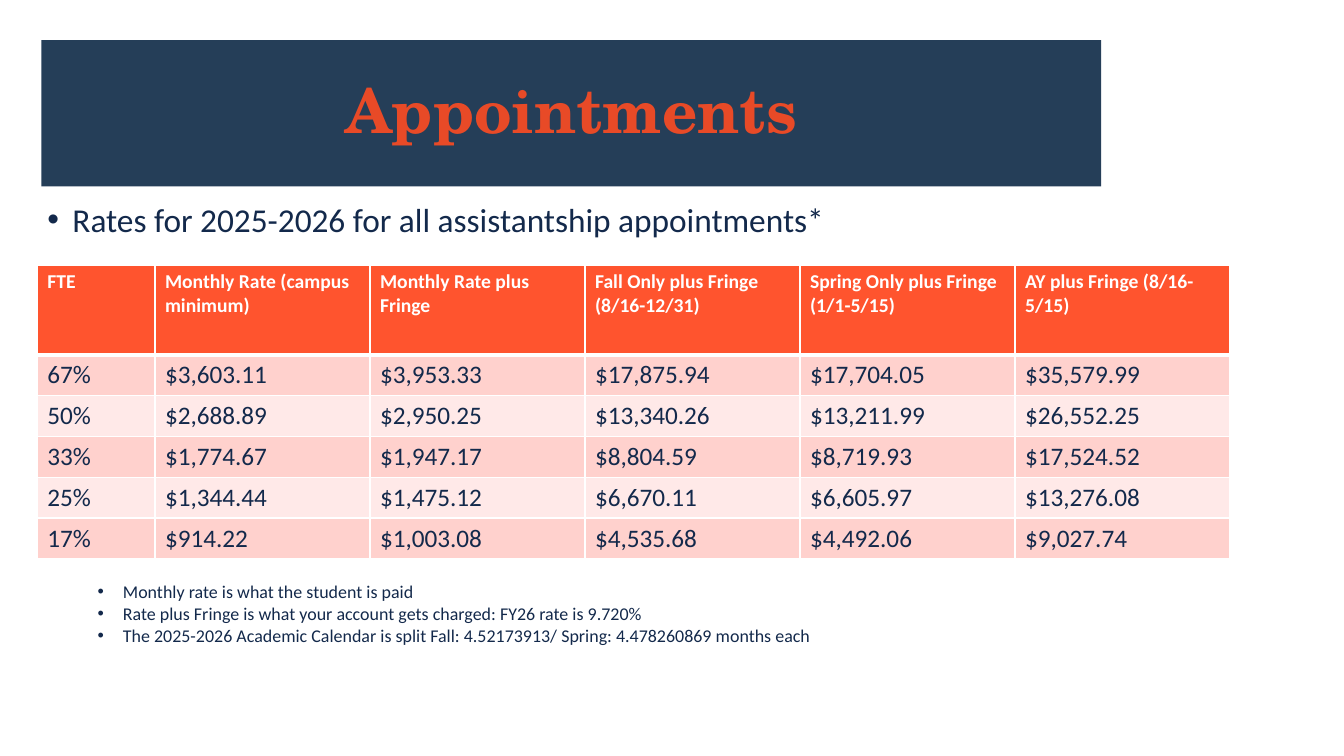
"""Build a slide of assistantship appointment rates."""
import pptx
import pptx.dml.color
import pptx.enum.shapes
import pptx.enum.text
import pptx.oxml.ns
import pptx.util
from lxml import etree

SLIDE_WIDTH = pptx.util.Inches(13.33)
SLIDE_HEIGHT = pptx.util.Inches(7.5)
NAVY = "13294B"
WHITE = "FFFFFF"
HEADER_FILL = "FF542E"
BAND_FILLS = ("FFD1CD", "FFE9E8")
LEFT = 2.78
FTE_COLUMN, RATE_COLUMN = 8.75, 16
HEADER_ROW, RATE_ROW = 11.87, 5.4

RATES = [
    ("FTE", "Monthly Rate (campus minimum)", "Monthly Rate plus Fringe",
     "Fall Only plus Fringe (8/16-12/31)", "Spring Only plus Fringe (1/1-5/15)",
     "AY plus Fringe (8/16-5/15)"),
    ("67%", "$3,603.11", "$3,953.33", "$17,875.94", "$17,704.05", "$35,579.99"),
    ("50%", "$2,688.89", "$2,950.25", "$13,340.26", "$13,211.99", "$26,552.25"),
    ("33%", "$1,774.67", "$1,947.17", "$8,804.59", "$8,719.93", "$17,524.52"),
    ("25%", "$1,344.44", "$1,475.12", "$6,670.11", "$6,605.97", "$13,276.08"),
    ("17%", "$914.22", "$1,003.08", "$4,535.68", "$4,492.06", "$9,027.74"),
]
NOTES = [
    "Monthly rate is what the student is paid",
    "Rate plus Fringe is what your account gets charged: FY26 rate is 9.720%",
    "The 2025-2026 Academic Calendar is split Fall: 4.52173913/ Spring: 4.478260869 months each",
]


def across(percent):
    """Return a percentage of the slide width."""
    return int(SLIDE_WIDTH * percent / 100)


def down(percent):
    """Return a percentage of the slide height."""
    return int(SLIDE_HEIGHT * percent / 100)


def area(left, top, width, height):
    """Return a slide area given in percentages."""
    return across(left), down(top), across(width), down(height)


def color(value):
    """Return the colour of a hex string."""
    return pptx.dml.color.RGBColor.from_string(value)


def paint(part, value):
    """Fill a shape or cell with one colour."""
    part.fill.solid()
    part.fill.fore_color.rgb = color(value)


def style(paragraph, size, value, face="Calibri", bold=False):
    """Set the font of every run in a paragraph."""
    for run in paragraph.runs:
        run.font.name = face
        run.font.size = pptx.util.Pt(size)
        run.font.bold = bold
        run.font.color.rgb = color(value)


def add_banner(slide, heading):
    """Add the title banner."""
    banner = slide.shapes.add_shape(
        pptx.enum.shapes.MSO_SHAPE.RECTANGLE, *area(3.08, 5.33, 78.85, 19.33))
    banner.shadow.inherit = False
    paint(banner, "253E58")
    banner.line.fill.background()
    banner.text_frame.text = heading
    banner.text_frame.vertical_anchor = pptx.enum.text.MSO_ANCHOR.MIDDLE
    title = banner.text_frame.paragraphs[0]
    title.alignment = pptx.enum.text.PP_ALIGN.CENTER
    title.line_spacing = 0.9
    style(title, 44, "E84A27", "TeX Gyre Schola", True)


def add_bullets(slide, lines, top, height, size, indent):
    """Add a bulleted list with a hanging indent in inches."""
    bullets = slide.shapes.add_textbox(*area(LEFT, top, 78.85, height)).text_frame
    bullets.word_wrap = True
    bullets.text = "\n".join(lines)
    for index, point in enumerate(bullets.paragraphs):
        properties = point._p.get_or_add_pPr()
        properties.set("marL", str(pptx.util.Inches(indent)))
        properties.set("indent", str(pptx.util.Inches(-0.25)))
        etree.SubElement(properties, pptx.oxml.ns.qn("a:buFont"), typeface="Arial")
        etree.SubElement(properties, pptx.oxml.ns.qn("a:buChar"), char="•")
        point.line_spacing = 0.7
        point.space_before = pptx.util.Pt(5 if index else 0)
        style(point, size, NAVY)


def add_borders(cell, widths):
    """Draw white cell borders with widths in points by side."""
    properties = cell._tc.get_or_add_tcPr()
    for side, width in widths.items():
        border = etree.SubElement(
            properties, pptx.oxml.ns.qn(f"a:ln{side}"), w=str(pptx.util.Pt(width)))
        fill = etree.SubElement(border, pptx.oxml.ns.qn("a:solidFill"))
        etree.SubElement(fill, pptx.oxml.ns.qn("a:srgbClr"), val=WHITE)


def add_rates(slide, rates):
    """Add the banded table of rates."""
    columns = [FTE_COLUMN] + [RATE_COLUMN] * (len(rates[0]) - 1)
    rows = [HEADER_ROW] + [RATE_ROW] * (len(rates) - 1)
    table = slide.shapes.add_table(
        len(rows), len(columns), *area(LEFT, 35.07, sum(columns), sum(rows))).table
    for column, width in zip(table.columns, columns):
        column.width = across(width)
    for row, height in zip(table.rows, rows):
        row.height = down(height)
    for row_index, entries in enumerate(rates):
        header = row_index == 0
        for column_index, entry in enumerate(entries):
            cell = table.cell(row_index, column_index)
            add_borders(cell, {"L": 1, "R": 1, "T": 3 if row_index == 1 else 1,
                               "B": 3 if header else 1})
            paint(cell, HEADER_FILL if header else BAND_FILLS[(row_index - 1) % 2])
            cell.text_frame.text = entry
            style(cell.text_frame.paragraphs[0], 14 if header else 18,
                  WHITE if header else NAVY, bold=header)


def main():
    """Build and save the slide."""
    deck = pptx.Presentation()
    deck.slide_width, deck.slide_height = SLIDE_WIDTH, SLIDE_HEIGHT
    slide = deck.slides.add_slide(deck.slide_layouts[6])
    add_banner(slide, "Appointments")
    add_bullets(slide, ["Rates for 2025-2026 for all assistantship appointments*"],
                27.2, 6, 23.8, 0.25)
    add_rates(slide, RATES)
    add_bullets(slide, NOTES, 76.93, 10, 12.8, 0.75)
    deck.save("out.pptx")


if __name__ == "__main__":
    main()
